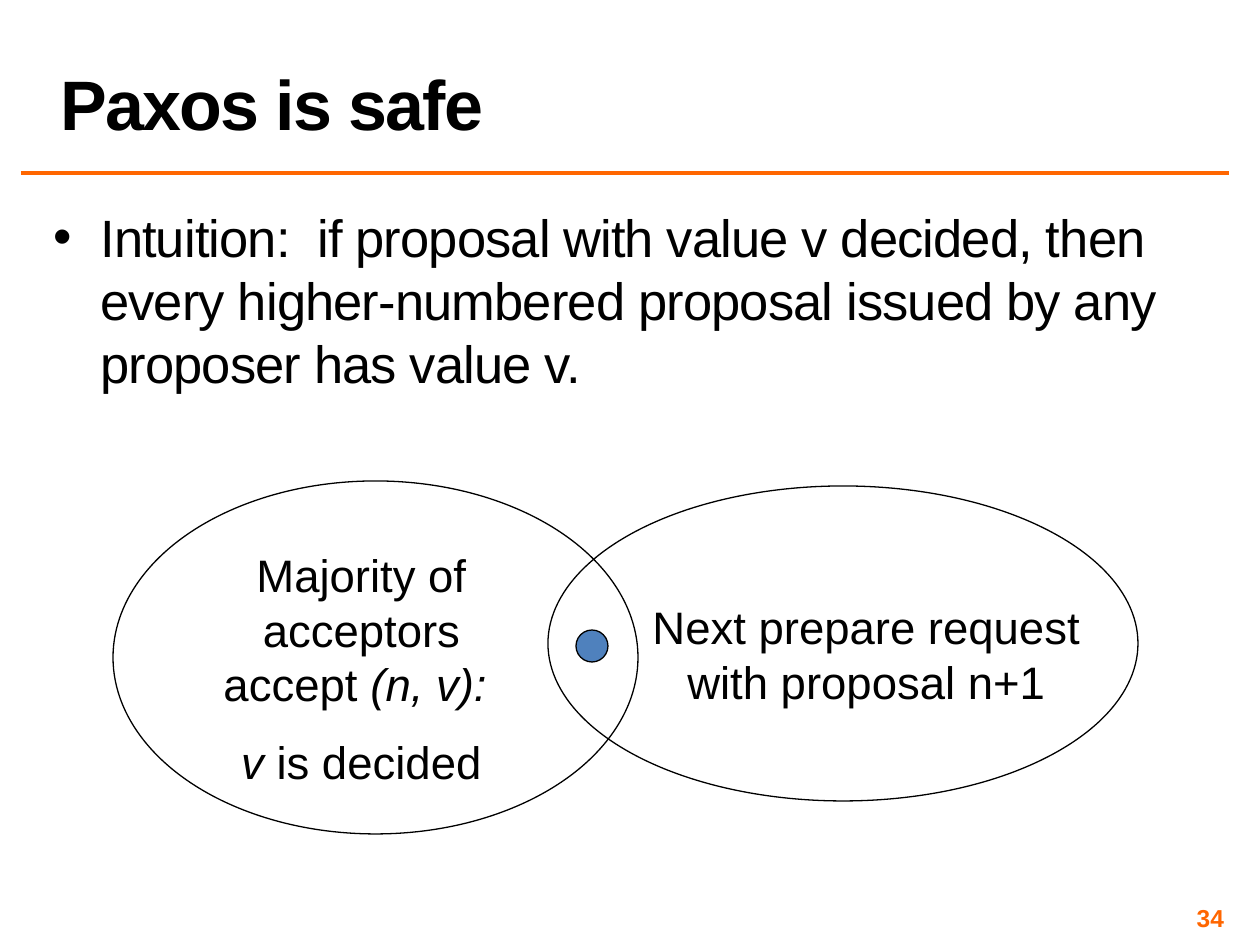
from dataclasses import dataclass

from lxml.etree import SubElement
from pptx import Presentation
from pptx.dml.color import RGBColor as RGB
from pptx.enum.shapes import MSO_CONNECTOR as Connector, MSO_SHAPE as Shape
from pptx.enum.text import MSO_ANCHOR as Anchor, MSO_AUTO_SIZE as AutoSize, PP_ALIGN as Align
from pptx.oxml.ns import qn
from pptx.util import Emu, Pt


@dataclass(frozen=True)
class Theme:
    font: str = "Arial"
    ink: RGB = RGB(0, 0, 0)
    paper: RGB = RGB(255, 255, 255)
    accent: RGB = RGB(0xFF, 0x66, 0x00)
    dot: RGB = RGB(0x4F, 0x81, 0xBD)
    title_size: int = 40
    body_size: int = 30
    label_size: int = 26
    number_size: int = 14
    outline: float = 0.75
    rule: int = 2


THEME = Theme()
EMU_PER_PX = 914400 / 126


def px(length):
    return Emu(round(length * EMU_PER_PX))


def place(shape, left, top, width, height):
    shape.left, shape.top, shape.width, shape.height = map(px, (left, top, width, height))


def style(paragraph, size, color=THEME.ink, bold=False, align=Align.LEFT, tracking=0):
    """Format a whole paragraph; tracking is in hundredths of a point."""
    paragraph.alignment = align
    font = paragraph.font
    font.name, font.size, font.bold = THEME.font, Pt(size), bold
    font.color.rgb = color
    if tracking:
        paragraph._p.get_or_add_pPr().get_or_add_defRPr().set("spc", str(tracking))


def set_insets(frame, inset):
    frame.margin_left = frame.margin_right = px(inset)
    frame.margin_top = frame.margin_bottom = px(inset)


def add_ellipse(slide, box, fill=None):
    ellipse = slide.shapes.add_shape(Shape.OVAL, *map(px, box))
    ellipse.shadow.inherit = False
    if fill is None:
        ellipse.fill.background()
    else:
        ellipse.fill.solid()
        ellipse.fill.fore_color.rgb = fill
    ellipse.line.color.rgb = THEME.ink
    ellipse.line.width = Pt(THEME.outline)


def add_label(slide, box, paragraphs):
    """Add centred paragraphs, each a list of (text, italic) runs."""
    frame = slide.shapes.add_textbox(*map(px, box)).text_frame
    frame.word_wrap = True
    frame.auto_size = AutoSize.SHAPE_TO_FIT_TEXT
    for index, runs in enumerate(paragraphs):
        paragraph = frame.add_paragraph() if index else frame.paragraphs[0]
        style(paragraph, THEME.label_size, align=Align.CENTER)
        paragraph.space_before = Pt(THEME.label_size / 2)
        for text, italic in runs:
            run = paragraph.add_run()
            run.text = text
            if italic:
                run.font.italic = True


def add_header(slide, left, top, width, height):
    # Title
    title = slide.shapes.title
    place(title, left, top, width, height)
    frame = title.text_frame
    frame.text = "Paxos is safe"
    frame.vertical_anchor = Anchor.BOTTOM
    frame.auto_size = AutoSize.NONE
    paragraph = frame.paragraphs[0]
    style(paragraph, THEME.title_size, bold=True, tracking=-100)
    paragraph.line_spacing = 0.8

    # Rule below the title
    rule_y = px(top + height + 23)
    rule = slide.shapes.add_connector(
        Connector.STRAIGHT, px(left - 27), rule_y, px(left + width), rule_y)
    rule.line.color.rgb = THEME.accent
    rule.line.width = Pt(THEME.rule)
    SubElement(rule._element.spPr, qn("a:effectLst"))


def add_body(slide, left, top, width, height):
    body = slide.placeholders[1]
    place(body, left, top, width, height)
    frame = body.text_frame
    frame.text = ("Intuition:  if proposal with value v decided, then every "
                  "higher-numbered proposal issued by any proposer has value v.")
    frame.auto_size = AutoSize.NONE
    set_insets(frame, 5)
    paragraph = frame.paragraphs[0]
    style(paragraph, THEME.body_size, tracking=-50)
    paragraph.space_before, paragraph.space_after = Pt(30), Pt(8)


def add_quorums(slide, left, top):
    # Majority that accepted the value
    add_ellipse(slide, (left, top, 525, 353), THEME.paper)
    add_label(slide, (left + 70, top + 60, 357, 261), [
        [("Majority of acceptors accept ", False), ("(n, v): ", True)],
        [("v", True), (" is decided", False)],
    ])

    # Acceptors reached by the next proposal
    add_ellipse(slide, (left + 435, top + 5, 590, 315))
    add_label(slide, (left + 512, top + 112, 483, 123),
              [[("Next prepare request with proposal n+1", False)]])

    # Shared acceptor in the overlap
    add_ellipse(slide, (left + 463, top + 149, 32, 32), THEME.dot)


def add_slide_number(slide, left, top, width, height):
    frame = slide.shapes.add_textbox(*map(px, (left, top, width, height))).text_frame
    frame.text = "34"
    frame.word_wrap = True
    frame.vertical_anchor = Anchor.MIDDLE
    set_insets(frame, 5)
    style(frame.paragraphs[0], THEME.number_size, THEME.accent, bold=True, align=Align.RIGHT)


def main():
    presentation = Presentation()
    presentation.slide_width, presentation.slide_height = px(1260), px(945)
    slide = presentation.slides.add_slide(presentation.slide_layouts[1])
    add_header(slide, 48, 3, 1181, 147)
    add_body(slide, 48, 200, 1181, 690)
    add_quorums(slide, 113, 481)
    add_slide_number(slide, 935, 903, 294, 29)
    presentation.save("out.pptx")


if __name__ == "__main__":
    main()
